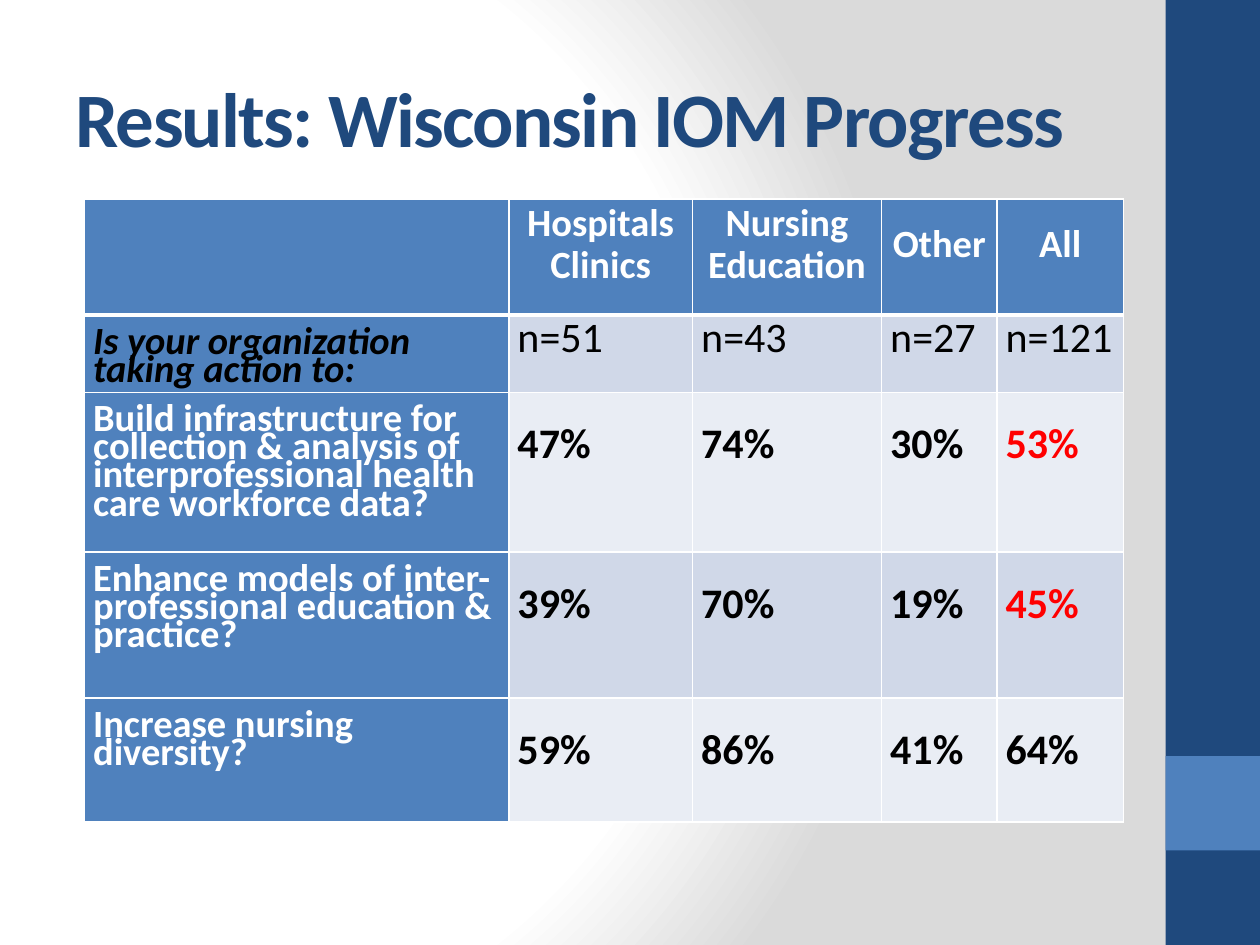
import dataclasses
import typing

import pptx
import pptx.dml.color
import pptx.enum.shapes
import pptx.enum.text
import pptx.oxml
import pptx.oxml.ns
import pptx.util

Pt = pptx.util.Pt
RGB = pptx.dml.color.RGBColor.from_string
Align = pptx.enum.text.PP_ALIGN
Anchor = pptx.enum.text.MSO_ANCHOR


@dataclasses.dataclass(frozen=True)
class Theme:
    font: str = "Calibri"
    navy: str = "1F497D"
    blue: str = "4F81BD"
    white: str = "FFFFFF"
    black: str = "000000"
    red: str = "FF0000"
    grey: str = "DADADA"
    band_dark: str = "D0D8E8"
    band_light: str = "E9EDF4"
    title_size: float = 44
    label_size: float = 22
    value_size: float = 24
    line: float = 12.1
    gap: float = 4
    inset: float = 5


THEME = Theme()
STEP = THEME.line + THEME.gap


@dataclasses.dataclass(frozen=True)
class Bar:
    top: float
    height: float
    color: str


@dataclasses.dataclass(frozen=True)
class Style:
    size: float
    color: str
    bold: bool = True
    italic: bool = False


@dataclasses.dataclass(frozen=True)
class CellFormat:
    fill: str
    style: Style
    top: float = 0
    gap: float = THEME.gap
    align: typing.Any = Align.LEFT
    anchor: typing.Any = Anchor.TOP
    edge_top: float = 1
    edge_bottom: float = 1


@dataclasses.dataclass(frozen=True)
class Question:
    lines: tuple[str, ...]
    values: tuple[str, ...]
    highlight: bool


BARS = (Bar(0, 540, THEME.navy), Bar(432, 54, THEME.blue))
COLUMNS = (242.5, 105, 108, 66, 72.25)
ROWS = (66.3, 44.3, 91.2, 83.4, 70.9)
HEADERS = (("Hospitals", "Clinics"), ("Nursing", "Education"), ("Other",), ("All",))
PROMPT = ("Is your organization", "taking action to:")
COUNTS = ("n=51", "n=43", "n=27", "n=121")
QUESTIONS = (
    Question(("Build infrastructure for", "collection & analysis of",
              "interprofessional health", "care workforce data?"),
             ("47%", "74%", "30%", "53%"), True),
    Question(("Enhance models of inter-", "professional education &", "practice?"),
             ("39%", "70%", "19%", "45%"), True),
    Question(("Increase nursing", "diversity?"), ("59%", "86%", "41%", "64%"), False),
)


def set_background(s: typing.Any) -> None:
    stops = "".join(
        f'<a:gs pos="{pos}"><a:srgbClr val="{color}"/></a:gs>'
        for pos, color in ((0, THEME.white), (75000, THEME.white), (100000, THEME.grey)))
    bg = pptx.oxml.parse_xml(
        f'<p:bg {pptx.oxml.ns.nsdecls("p", "a")}><p:bgPr><a:gradFill rotWithShape="1">'
        f'<a:gsLst>{stops}</a:gsLst><a:path path="circle">'
        '<a:fillToRect l="20000" t="50000" r="100000" b="50000"/></a:path>'
        '</a:gradFill><a:effectLst/></p:bgPr></p:bg>')
    s.element.cSld.insert(0, bg)


def style_runs(p: typing.Any, style: Style) -> None:
    for r in p.runs:
        r.font.name = THEME.font
        r.font.size = Pt(style.size)
        r.font.bold = style.bold
        r.font.italic = style.italic
        r.font.color.rgb = RGB(style.color)


def draw_bar(s: typing.Any, bar: Bar) -> None:
    sp = s.shapes.add_shape(pptx.enum.shapes.MSO_SHAPE.RECTANGLE,
                            Pt(666), Pt(bar.top), Pt(54), Pt(bar.height))
    sp.shadow.inherit = False
    sp.fill.solid()
    sp.fill.fore_color.rgb = RGB(bar.color)
    sp.line.fill.background()


def draw_title(s: typing.Any, text: str) -> None:
    tf = s.shapes.add_textbox(Pt(36), Pt(21.6), Pt(600), Pt(90)).text_frame
    tf.word_wrap = True
    tf.vertical_anchor = Anchor.MIDDLE
    tf.text = text
    p = tf.paragraphs[0]
    style_runs(p, Style(THEME.title_size, THEME.navy))
    p.runs[0].font._element.set("spc", "-100")


def set_borders(cell: typing.Any, top: float, bottom: float) -> None:
    edges = (("lnL", 1), ("lnR", 1), ("lnT", top), ("lnB", bottom))
    for i, (tag, width) in enumerate(edges):
        ln = pptx.oxml.parse_xml(
            f'<a:{tag} {pptx.oxml.ns.nsdecls("a")} w="{Pt(width)}"><a:solidFill>'
            f'<a:srgbClr val="{THEME.white}"/></a:solidFill></a:{tag}>')
        cell._tc.get_or_add_tcPr().insert(i, ln)


def fill_cell(cell: typing.Any, lines: typing.Sequence[str], fmt: CellFormat) -> None:
    cell.fill.solid()
    cell.fill.fore_color.rgb = RGB(fmt.fill)
    cell.margin_left = cell.margin_right = Pt(THEME.inset)
    cell.margin_top, cell.margin_bottom = Pt(fmt.top), Pt(0)
    cell.vertical_anchor = fmt.anchor
    set_borders(cell, fmt.edge_top, fmt.edge_bottom)
    cell.text_frame.text = "\n".join(lines)
    for i, p in enumerate(cell.text_frame.paragraphs):
        p.alignment = fmt.align
        p.line_spacing = Pt(THEME.line)
        p.space_before = Pt(fmt.gap if i else 0)
        style_runs(p, fmt.style)


def draw_table(s: typing.Any) -> None:
    table = s.shapes.add_table(len(ROWS), len(COLUMNS), Pt(48.24), Pt(113.76),
                               Pt(sum(COLUMNS)), Pt(sum(ROWS))).table
    table.first_row = table.horz_banding = False
    for column, width in zip(table.columns, COLUMNS):
        column.width = Pt(width)
    for row, height in zip(table.rows, ROWS):
        row.height = Pt(height)

    label = Style(THEME.label_size, THEME.white)
    value = Style(THEME.value_size, THEME.black)
    header = CellFormat(THEME.blue, label, gap=THEME.line, align=Align.CENTER,
                        anchor=Anchor.MIDDLE, edge_bottom=3)
    for c, lines in enumerate(((), *HEADERS)):
        fill_cell(table.cell(0, c), lines, header)

    prompt = CellFormat(THEME.blue, Style(THEME.label_size, THEME.black, italic=True),
                        top=STEP, edge_top=3)
    fill_cell(table.cell(1, 0), PROMPT, prompt)
    count = CellFormat(THEME.band_dark, dataclasses.replace(value, bold=False),
                       top=STEP, edge_top=3)
    for c, text in enumerate(COUNTS, 1):
        fill_cell(table.cell(1, c), (text,), count)

    for r, question in enumerate(QUESTIONS, 2):
        fill_cell(table.cell(r, 0), question.lines, CellFormat(THEME.blue, label, top=STEP))
        band = THEME.band_dark if r % 2 else THEME.band_light
        for c, text in enumerate(question.values, 1):
            marked = question.highlight and c == len(question.values)
            style = dataclasses.replace(value, color=THEME.red) if marked else value
            fill_cell(table.cell(r, c), (text,), CellFormat(band, style, top=2 * STEP))


def main() -> None:
    prs = pptx.Presentation()
    prs.slide_width, prs.slide_height = Pt(720), Pt(540)
    s = prs.slides.add_slide(prs.slide_layouts[6])
    set_background(s)
    for bar in BARS:
        draw_bar(s, bar)
    draw_title(s, "Results: Wisconsin IOM Progress")
    draw_table(s)
    prs.save("out.pptx")


if __name__ == "__main__":
    main()
